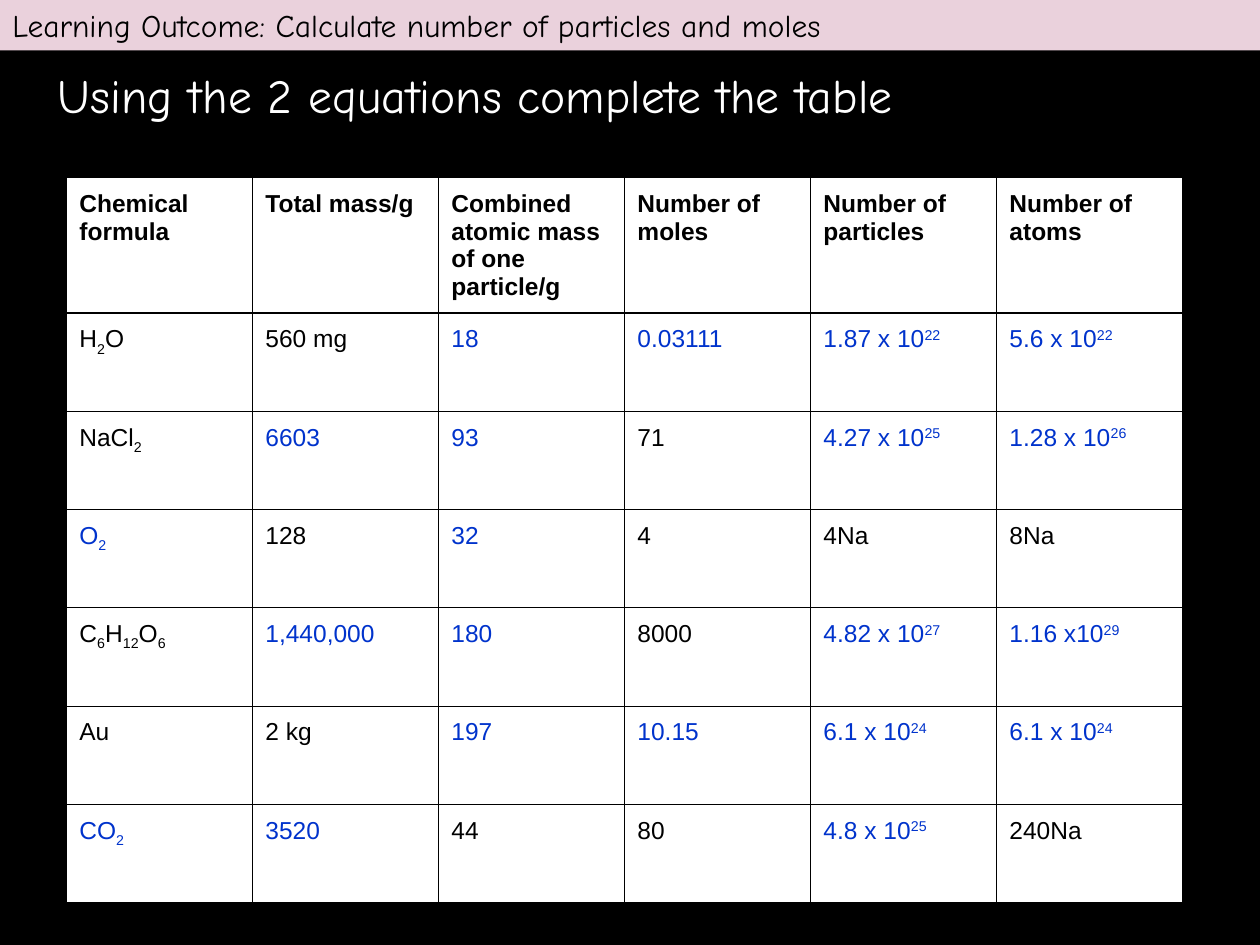
"""Build a chemistry slide with a table of moles, particles and atoms."""
import pptx
import pptx.dml.color
import pptx.enum.shapes
import pptx.enum.text
import pptx.oxml
import pptx.util
from pptx.oxml.ns import nsdecls

BANNER = "Learning Outcome: Calculate number of particles and moles"
TITLE = "Using the 2 equations complete the table"
HEADS = ["Chemical formula", "Total mass/g", "Combined atomic mass of one particle/g",
         "Number of moles", "Number of particles", "Number of atoms"]
# "*" marks an answer, "|" parts the runs, "_" lowers and "^" raises a run
ROWS = [
    ["H|_2|O", "560 mg", "*18", "*0.03111", "*1.87 x 10|^22", "*5.6 x 10|^22"],
    ["NaCl|_2", "*6603", "*93", "71", "*4.27 x 10|^25", "*1.28 x 10|^26"],
    ["*O|_2", "128", "*32", "4", "4Na", "8Na"],
    ["C|_6|H|_12|O|_6", "*1,440,000", "*180", "8000", "*4.82 x 10|^27", "*1.16 x10|^29"],
    ["Au", "2 kg", "*197", "*10.15", "*6.1 x 10|^24", "*6.1 x 10|^24"],
    ["*CO|_2", "*3520", "44", "80", "*4.8 x 10|^25", "240Na"],
]
SHIFT = {"_": "-25000", "^": "30000"}
BLACK, WHITE, BLUE, PINK = "000000", "FFFFFF", "0033CC", "EAD1DC"
Inches, Pt = pptx.util.Inches, pptx.util.Pt
ANCHOR = pptx.enum.text.MSO_ANCHOR
LEFT = pptx.enum.text.PP_ALIGN.LEFT


def paint(fill, tint):
    """Give a fill one solid colour."""
    fill.solid()
    fill.fore_color.rgb = pptx.dml.color.RGBColor.from_string(tint)


def write(para, text, size, font, tint, bold=False):
    """Add one formatted run to a paragraph."""
    run = para.add_run()
    run.text = text
    run.font.size, run.font.name, run.font.bold = Pt(size), font, bold
    paint(run.font.fill, tint)
    return run


def border(cell):
    """Draw thin black lines round a cell."""
    props = cell._tc.get_or_add_tcPr()
    for spot, side in enumerate(("lnL", "lnR", "lnT", "lnB")):
        props.insert(spot, pptx.oxml.parse_xml(
            f'<a:{side} {nsdecls("a")} w="{Pt(0.75)}"><a:solidFill>'
            f'<a:srgbClr val="{BLACK}"/></a:solidFill></a:{side}>'))


def enter(cell, text, bold):
    """Fill a table cell from marked text."""
    paint(cell.fill, WHITE)
    border(cell)
    cell.margin_left = cell.margin_right = Inches(0.1)
    cell.margin_top = cell.margin_bottom = Inches(0.1)
    tint = BLUE if text.startswith("*") else BLACK
    para = cell.text_frame.paragraphs[0]
    for part in text.lstrip("*").split("|"):
        run = write(para, part.lstrip("_^"), 14, "Arial", tint, bold)
        if part[0] in SHIFT:
            run._r.get_or_add_rPr().set("baseline", SHIFT[part[0]])


def add_banner(slide):
    """Add the strip across the top."""
    strip = slide.shapes.add_shape(pptx.enum.shapes.MSO_SHAPE.RECTANGLE,
                                   0, 0, Inches(10), Inches(0.4))
    strip.shadow.inherit = False
    paint(strip.fill, PINK)
    strip.line.fill.background()
    frame = strip.text_frame
    frame.word_wrap, frame.vertical_anchor = True, ANCHOR.MIDDLE
    para = frame.paragraphs[0]
    para.alignment = LEFT
    write(para, BANNER, 18, "Comic Neue", BLACK)


def add_title(slide):
    """Place and format the title."""
    title = slide.shapes.title
    title.left, title.top = Inches(0.36), Inches(0.56)
    title.width, title.height = Inches(7.86), Inches(0.88)
    frame = title.text_frame
    frame.word_wrap, frame.vertical_anchor = True, ANCHOR.TOP
    frame.auto_size = pptx.enum.text.MSO_AUTO_SIZE.NONE
    para = frame.paragraphs[0]
    para.alignment, para.line_spacing = LEFT, 0.8
    write(para, TITLE, 27.2, "Comic Neue", WHITE)


def add_grid(slide):
    """Add the table of answers."""
    data = [HEADS] + ROWS
    frame = slide.shapes.add_table(len(data), len(HEADS), Inches(0.53), Inches(1.41),
                                   Inches(8.86), Inches(5.84))
    grid = frame.table
    for row, texts in zip(grid.rows, data):
        row.height = Inches(0.78)
        for cell, text in zip(row.cells, texts):
            enter(cell, text, texts is HEADS)
    frame.height = Inches(5.84)


def main():
    """Build and save the slide."""
    deck = pptx.Presentation()
    deck.slide_width, deck.slide_height = Inches(10), Inches(7.5)
    slide = deck.slides.add_slide(deck.slide_layouts[5])
    paint(slide.background.fill, BLACK)
    add_banner(slide)
    add_grid(slide)
    add_title(slide)
    deck.save("out.pptx")


if __name__ == "__main__":
    main()
